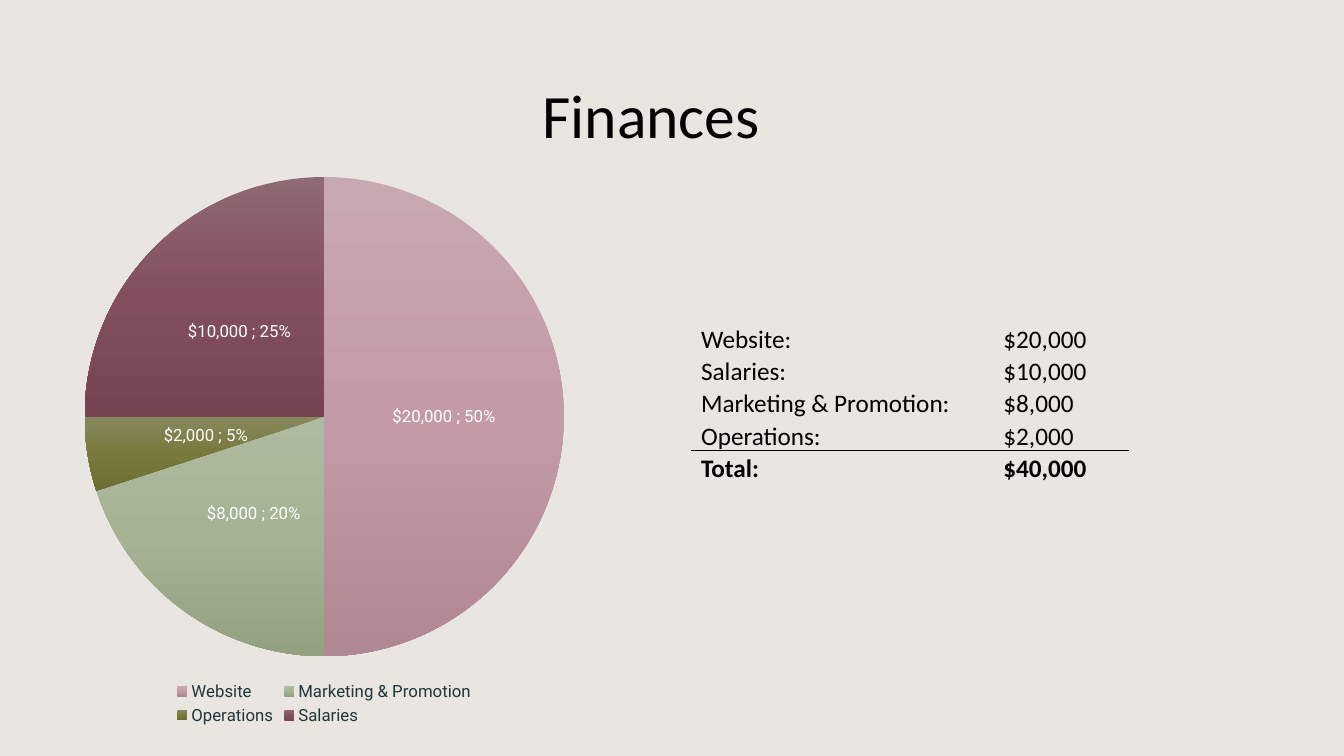
from copy import deepcopy

from lxml import etree
from pptx import Presentation
from pptx.chart.data import CategoryChartData
from pptx.dml.color import RGBColor
from pptx.enum.chart import XL_CHART_TYPE, XL_LABEL_POSITION as LabelPos, XL_LEGEND_POSITION as LegendPos
from pptx.enum.shapes import MSO_CONNECTOR, MSO_SHAPE
from pptx.enum.text import MSO_ANCHOR, PP_ALIGN
from pptx.oxml import parse_xml
from pptx.oxml.ns import qn
from pptx.util import Cm, Pt

BACKDROP = RGBColor(0xE0, 0xDA, 0xD4)
BLACK = RGBColor(0, 0, 0)
WHITE = RGBColor(0xFF, 0xFF, 0xFF)
LEGEND_INK = RGBColor(0x21, 0x36, 0x3B)
AMOUNT_TAB = Cm(7.62)
DOLLARS = '"$"#,##0_);[Red]\\("$"#,##0\\)'

# Category, amount, and slice shades from top to bottom
BUDGET = [
    ("Website", 20000, (RGBColor(0xC8, 0xA8, 0xB1), RGBColor(0xC3, 0x9B, 0xA6), RGBColor(0xAF, 0x88, 0x93))),
    ("Marketing & Promotion", 8000, (RGBColor(0xAF, 0xBB, 0xA1), RGBColor(0xA5, 0xB3, 0x94), RGBColor(0x93, 0xA1, 0x81))),
    ("Operations", 2000, (RGBColor(0x87, 0x87, 0x5E), RGBColor(0x79, 0x79, 0x3D), RGBColor(0x6E, 0x6E, 0x34))),
    ("Salaries", 10000, (RGBColor(0x8F, 0x69, 0x73), RGBColor(0x83, 0x4F, 0x5D), RGBColor(0x76, 0x44, 0x52))),
]


def write(paragraph, text, size=18, bold=False, align=PP_ALIGN.LEFT, spacing=None, tab=None):
    if tab is not None:
        paragraph._p.get_or_add_pPr().append(parse_xml(
            '<a:tabLst xmlns:a="http://schemas.openxmlformats.org/drawingml/2006/main">'
            f'<a:tab pos="{int(tab)}" algn="l"/></a:tabLst>'))
    paragraph.alignment = align
    paragraph.line_spacing = spacing
    run = paragraph.add_run()
    run.text = text
    run.font.name = "Calibri"
    run.font.size = Pt(size)
    run.font.bold = bold
    run.font.color.rgb = BLACK


prs = Presentation()
prs.slide_width, prs.slide_height = Cm(33.87), Cm(19.05)
slide = prs.slides.add_slide(prs.slide_layouts[5])

# Translucent backdrop behind everything
backdrop = slide.shapes.add_shape(MSO_SHAPE.RECTANGLE, 0, 0, prs.slide_width, prs.slide_height)
backdrop.shadow.inherit = False
backdrop.line.fill.background()
backdrop.fill.solid()
backdrop.fill.fore_color.rgb = BACKDROP
tint = backdrop._element.spPr.find(".//" + qn("a:srgbClr"))
etree.SubElement(tint, qn("a:alpha")).set("val", "70000")
slide.shapes.title._element.addprevious(backdrop._element)

# Title
title = slide.shapes.title
title.left, title.top, title.width, title.height = Cm(1.27), Cm(1.02), Cm(30.28), Cm(3.68)
title.text_frame.vertical_anchor = MSO_ANCHOR.MIDDLE
write(title.text_frame.paragraphs[0], "Finances", size=44, align=PP_ALIGN.CENTER)

# Pie chart
budget_data = CategoryChartData(number_format=DOLLARS)
budget_data.categories = [name for name, _, _ in BUDGET]
budget_data.add_series("Series 1", [amount for _, amount, _ in BUDGET])
pie = slide.shapes.add_chart(XL_CHART_TYPE.PIE, Cm(1.73), Cm(4.11), Cm(12.88), Cm(14.27), budget_data).chart
pie.has_title = False
pie.font.name, pie.font.size = "Roboto", Pt(10)
pie.plots[0].vary_by_categories = True

# Slices shaded from top to bottom
spending = pie.plots[0].series[0]
for index, (_, _, shades) in enumerate(BUDGET):
    fill = spending.points[index].format.fill
    fill.gradient()
    fill.gradient_angle = 270
    first_stop = fill.gradient_stops[0]._gs
    first_stop.addnext(deepcopy(first_stop))
    for stop, position, shade in zip(fill.gradient_stops, (0, 0.5, 1), shades):
        stop.position = position
        stop.color.rgb = shade

# Slice labels take the dollar format of the data
labels = spending.data_labels
labels.show_value = True
labels.show_percentage = True
labels.position = LabelPos.CENTER
separator = etree.Element(qn("c:separator"))
separator.text = "; "
labels._element.find(qn("c:showBubbleSize")).addnext(separator)

# Legend
pie.has_legend = True
pie.legend.position = LegendPos.BOTTOM
pie.legend.include_in_layout = False
for font, ink in ((labels.font, WHITE), (pie.legend.font, LEGEND_INK)):
    font.name, font.size = "Roboto", Pt(12)
    font.color.rgb = ink

# Amounts, largest first, then the total
amounts = sorted(((name, amount) for name, amount, _ in BUDGET), key=lambda row: -row[1])
amounts.append(("Total", sum(amount for _, amount in amounts)))
summary = slide.shapes.add_textbox(Cm(17.42), Cm(7.96), Cm(14.12), Cm(10.07)).text_frame
summary.word_wrap = True
for index, (name, amount) in enumerate(amounts):
    paragraph = summary.add_paragraph() if index else summary.paragraphs[0]
    write(paragraph, f"{name}:\t${amount:,}", bold=name == "Total", spacing=1.07, tab=AMOUNT_TAB)

# Rule above the total
total_rule = slide.shapes.add_connector(MSO_CONNECTOR.STRAIGHT, Cm(17.42), Cm(11.35), Cm(28.45), Cm(11.35))
total_rule.line.color.rgb = BLACK
total_rule.line.width = Pt(0.5)
etree.SubElement(total_rule._element.spPr, qn("a:effectLst"))

prs.save("out.pptx")
